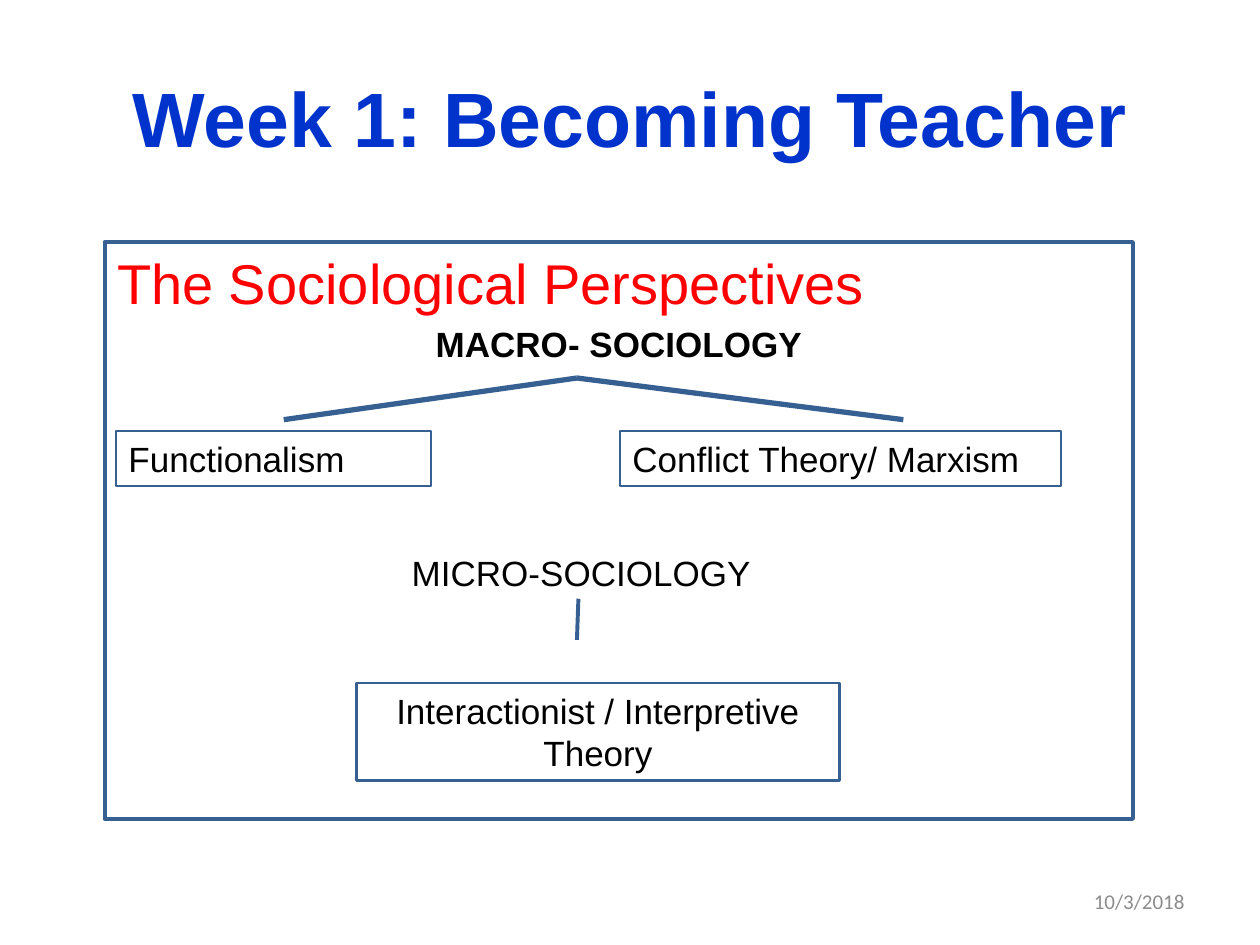
"""Build the Week 1 slide on the sociological perspectives."""
from lxml import etree
from pptx import Presentation
from pptx import util as u
from pptx.dml.color import RGBColor
from pptx.enum import shapes, text
from pptx.oxml.ns import qn

COLORS = {"title": "0033CC", "heading": "FF0000", "text": "000000",
          "line": "376092", "date": "8C8C8C"}
LEFT, CENTER, RIGHT = (text.PP_ALIGN.LEFT, text.PP_ALIGN.CENTER,
                       text.PP_ALIGN.RIGHT)
TOP, MIDDLE = text.MSO_ANCHOR.TOP, text.MSO_ANCHOR.MIDDLE


def rgb(name):
    """Return the named palette colour."""
    return RGBColor.from_string(COLORS[name])


def style(p, size, color="text", font="Arial", bold=False, align=LEFT):
    """Format a paragraph and its runs."""
    p.alignment = align
    for r in p.runs:
        r.font.size = u.Pt(size)
        r.font.name = font
        r.font.bold = bold
        r.font.color.rgb = rgb(color)


def add_label(s, box, words, size=20, anchor=TOP, **look):
    """Add an unframed line of text."""
    sp = s.shapes.add_textbox(*map(u.Cm, box))
    tf = sp.text_frame
    tf.word_wrap = True
    tf.vertical_anchor = anchor
    tf.text = words
    style(tf.paragraphs[0], size, **look)


def add_frame(s, box, words, width=1.5, align=LEFT):
    """Add an outlined rectangle with text and return its text frame."""
    sp = s.shapes.add_shape(shapes.MSO_SHAPE.RECTANGLE, *map(u.Cm, box))
    sp.shadow.inherit = False
    sp.fill.background()
    sp.line.color.rgb = rgb("line")
    sp.line.width = u.Pt(width)
    tf = sp.text_frame
    tf.word_wrap = True
    tf.vertical_anchor = TOP
    tf.text = words
    style(tf.paragraphs[0], 20, align=align)
    return tf


def add_line(s, start, end, width):
    """Add a straight line without a shadow."""
    sp = s.shapes.add_connector(shapes.MSO_CONNECTOR.STRAIGHT,
                                *map(u.Cm, start + end))
    sp.line.color.rgb = rgb("line")
    sp.line.width = u.Pt(width)
    etree.SubElement(sp._element.spPr, qn("a:effectLst"))


def add_body(s):
    """Add the large frame with its two headings."""
    tf = add_frame(s, (2.11, 4.88, 20.73, 11.63),
                   "The Sociological Perspectives", width=2.25)
    style(tf.paragraphs[0], 32, color="heading")
    p = tf.add_paragraph()
    p.text = "MACRO- SOCIOLOGY"
    style(p, 20, bold=True, align=CENTER)
    for p in tf.paragraphs:
        p.space_before = u.Pt(4)


def main():
    """Build and save the slide."""
    prs = Presentation()
    prs.slide_width, prs.slide_height = u.Cm(25.4), u.Cm(19.05)
    s = prs.slides.add_slide(prs.slide_layouts[6])

    add_label(s, (18.21, 17.65, 5.92, 1.02), "10/3/2018", 12, MIDDLE,
              color="date", font="Calibri", align=RIGHT)
    add_label(s, (1.27, 0.76, 22.86, 3.18), "Week 1: Becoming Teacher", 44,
              MIDDLE, color="title", bold=True, align=CENTER)
    add_body(s)

    apex = (11.63, 7.62)
    for x in (5.72, 18.21):
        add_line(s, apex, (x, 8.46), 3)
    add_frame(s, (2.34, 8.69, 6.35, 1.11), "Functionalism")
    add_frame(s, (12.5, 8.69, 8.89, 1.11), "Conflict Theory/ Marxism")

    add_label(s, (8.05, 11, 9.53, 1.11), "MICRO-SOCIOLOGY")
    add_line(s, (11.66, 12.07), (11.63, 12.9), 2.25)
    add_frame(s, (7.19, 13.77, 9.73, 1.96),
              "Interactionist / Interpretive Theory", align=CENTER)
    prs.save("out.pptx")


if __name__ == "__main__":
    main()
